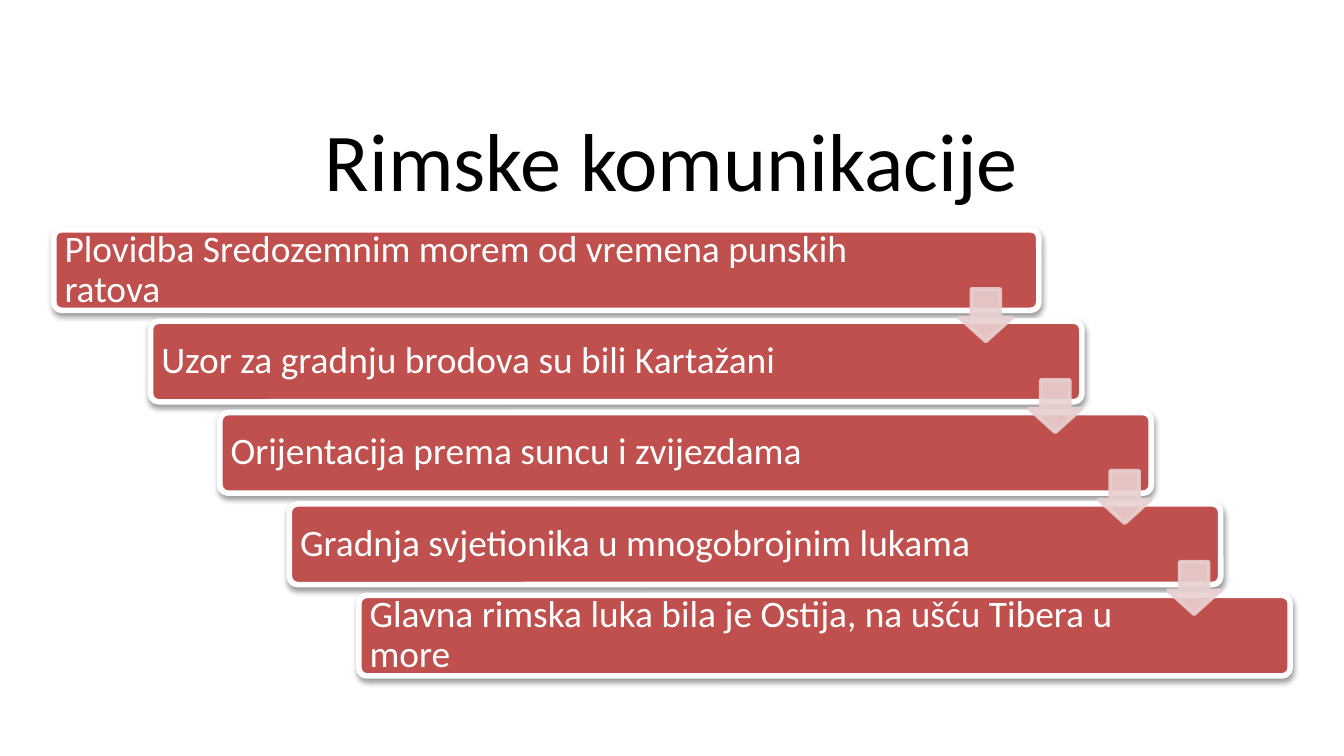
from dataclasses import dataclass

from lxml.etree import SubElement
from pptx import Presentation
from pptx.dml.color import RGBColor
from pptx.enum.shapes import MSO_SHAPE
from pptx.enum.text import MSO_ANCHOR, PP_ALIGN
from pptx.oxml.ns import qn
from pptx.util import Inches, Pt


@dataclass(frozen=True)
class Theme:
    font: str = "Calibri"
    ink: str = "000000"
    bar: str = "C0504D"
    light: str = "FFFFFF"
    arrow: str = "E8D0D0"
    title: int = 44
    body: int = 20


class Deck:
    def __init__(self, theme):
        self.theme = theme
        self.prs = Presentation()
        self.prs.slide_width = Inches(10)
        self.prs.slide_height = Inches(10 * 9 / 16)
        self.slide = self.prs.slides.add_slide(self.prs.slide_layouts[6])

    def shape(self, kind, box, fill, line, width):
        item = self.slide.shapes.add_shape(kind, *map(Inches, box))
        item.shadow.inherit = False
        item.fill.solid()
        item.fill.fore_color.rgb = RGBColor.from_string(fill)
        item.line.color.rgb = RGBColor.from_string(line)
        item.line.width = Pt(width)
        return item

    def text(self, words, box, size, color, align=PP_ALIGN.LEFT, inset=0.08):
        frame = self.slide.shapes.add_textbox(*map(Inches, box)).text_frame
        frame.word_wrap = True
        frame.vertical_anchor = MSO_ANCHOR.MIDDLE
        frame.margin_left = frame.margin_right = Inches(inset)
        frame.margin_top = frame.margin_bottom = Inches(inset)
        frame.text = words
        line = frame.paragraphs[0]
        line.alignment = align
        line.line_spacing = 0.9
        font = line.runs[0].font
        font.name = self.theme.font
        font.size = Pt(size)
        font.color.rgb = RGBColor.from_string(color)

    def title(self, words, box):
        self.text(words, box, self.theme.title, self.theme.ink, PP_ALIGN.CENTER)

    def bar(self, words, box, room):
        """Draw a shadowed bar whose text takes up the given width."""
        look = self.theme
        item = self.shape(MSO_SHAPE.ROUNDED_RECTANGLE, box, look.bar, look.light, 3)
        item.adjustments[0] = 0.1
        effects = item._element.spPr.find(qn("a:effectLst"))
        shade = SubElement(effects, qn("a:outerShdw"), blurRad=str(Pt(3.1)),
                           dist=str(Pt(1.6)), dir="5400000", rotWithShape="0")
        color = SubElement(shade, qn("a:srgbClr"), val=look.ink)
        SubElement(color, qn("a:alpha"), val="38000")
        left, top, _, height = box
        self.text(words, (left, top, room, height), look.body, look.light)

    def arrow(self, box):
        tint = self.theme.arrow
        item = self.shape(MSO_SHAPE.DOWN_ARROW, box, tint, tint, 2)
        item.adjustments[0] = 0.55
        item.adjustments[1] = 0.45
        for color in item._element.spPr.iter(qn("a:srgbClr")):
            SubElement(color, qn("a:alpha"), val="90000")

    def save(self):
        self.prs.save("out.pptx")


STEPS = [
    "Plovidba Sredozemnim morem od vremena punskih ratova",
    "Uzor za gradnju brodova su bili Kartažani",
    "Orijentacija prema suncu i zvijezdama",
    "Gradnja svjetionika u mnogobrojnim lukama",
    "Glavna rimska luka bila je Ostija, na ušću Tibera u more",
]
SHIFT = 1.55 / 3
DROP = 0.68
FALL = 2.03 / 3


def main():
    deck = Deck(Theme())
    deck.title("Rimske komunikacije", (0.5, 0.84, 9, 0.78))
    for i, words in enumerate(STEPS):
        # The first bar is wider and starts further left than the stair.
        left, width, room = (1.12 + (i - 1) * SHIFT, 6.93, 6.02) if i else (0.4, 7.33, 6.61)
        deck.bar(words, (left, 1.71 + i * DROP, width, 0.6), room)
    for i in range(len(STEPS) - 1):
        deck.arrow((7.14 + i * SHIFT, 2.15 + i * FALL, 0.39, 0.39))
    deck.save()


if __name__ == "__main__":
    main()
